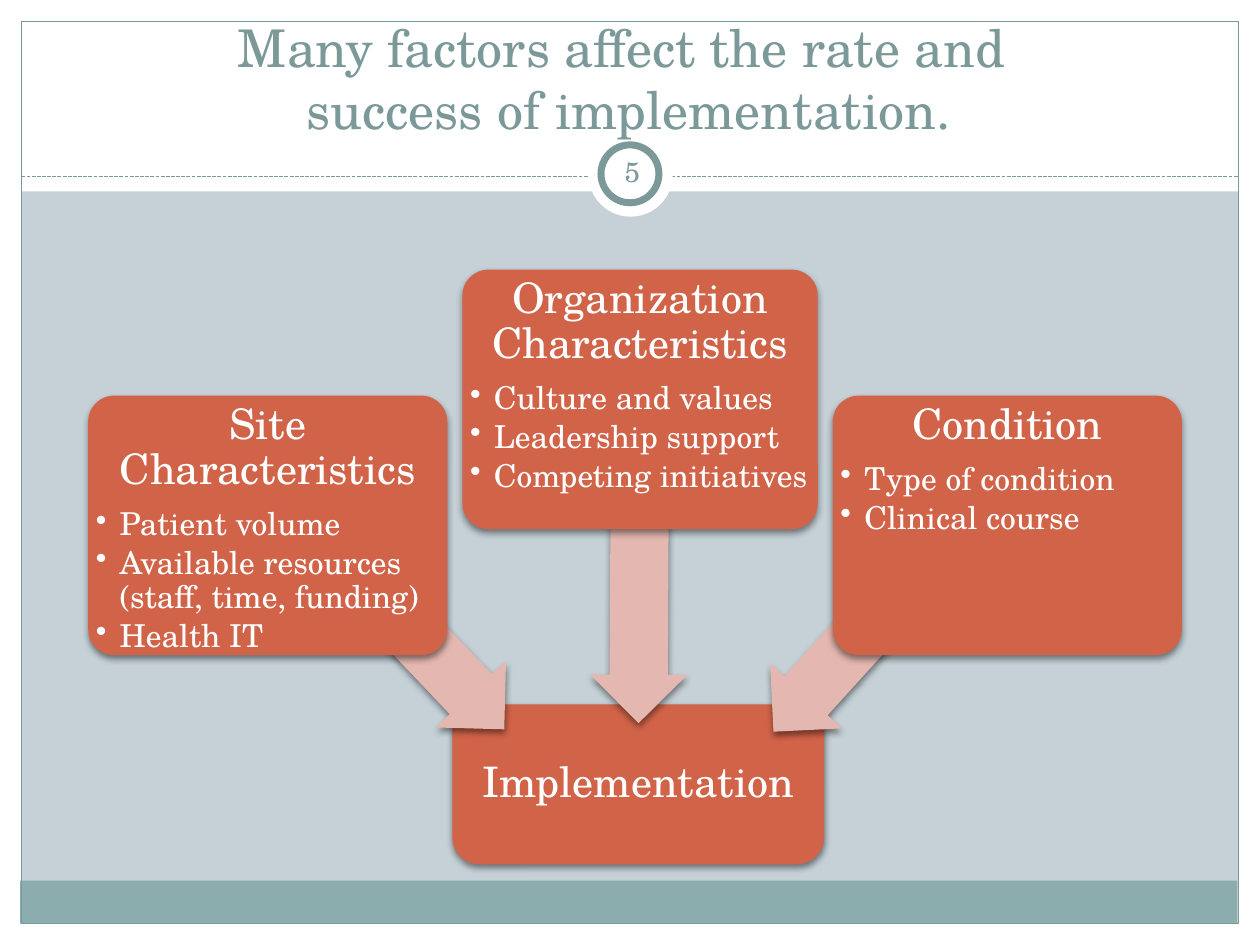
from dataclasses import dataclass

from lxml import etree
from pptx import Presentation
from pptx.dml.color import RGBColor
from pptx.enum.dml import MSO_LINE
from pptx.enum.shapes import MSO_CONNECTOR, MSO_SHAPE as Shape
from pptx.enum.text import MSO_ANCHOR as Anchor, PP_ALIGN as Align
from pptx.oxml import parse_xml
from pptx.oxml.ns import nsdecls, qn
from pptx.util import Inches, Pt


@dataclass(frozen=True)
class Theme:
    font: str = "TeX Gyre Schola"
    background: str = "C5D1D7"
    white: str = "FFFFFF"
    accent: str = "7C999A"
    footer: str = "8CADAE"
    box: str = "D16349"
    arrow: str = "E5B7B1"
    title_size: float = 29.7
    heading_size: float = 24
    bullet_size: float = 18
    number_size: float = 16


THEME = Theme()

FACTORS = [  # left, top, width, heading, bullets
    (0.7, 3.14, 2.85, "Site Characteristics",
     ["Patient volume", "Available resources (staff, time, funding)", "Health IT"]),
    (3.67, 2.14, 2.82, "Organization Characteristics",
     ["Culture and values", "Leadership support", "Competing initiatives"]),
    (6.61, 3.14, 2.77, "Condition",
     ["Type of condition", "Clinical course"]),
]
FACTOR_HEIGHT = 2.06
ARROWS = [  # left, top, length, rotation; one for each factor
    (1.9, 4.5, 2.49, 226.5),
    (3.65, 3.93, 2.85, 270.3),
    (5.73, 4.5, 2.49, 312.2),
]
ARROW_HEIGHT = 0.77


def color(code):
    return RGBColor.from_string(code)


def add_shadow(shape):
    shape._element.spPr.append(parse_xml(
        f'<a:effectLst {nsdecls("a")}>'
        '<a:outerShdw blurRad="50800" dist="25400" dir="5400000" rotWithShape="0">'
        '<a:srgbClr val="000000"><a:alpha val="45000"/></a:srgbClr>'
        '</a:outerShdw></a:effectLst>'))


def add_figure(slide, kind, left, top, width, height, fill=None, line=None,
               weight=0.75, rotation=0, adjust=(), shadow=False):
    figure = slide.shapes.add_shape(
        kind, Inches(left), Inches(top), Inches(width), Inches(height))
    if fill:
        figure.fill.solid()
        figure.fill.fore_color.rgb = color(fill)
    else:
        figure.fill.background()
    if line:
        figure.line.color.rgb = color(line)
        figure.line.width = Pt(weight)
    else:
        figure.line.fill.background()
    figure.rotation = rotation
    for index, value in enumerate(adjust):
        figure.adjustments[index] = value
    if shadow:
        add_shadow(figure)
    else:
        figure.shadow.inherit = False
    return figure


def set_frame(frame, anchor=Anchor.TOP, inset=0.0):
    frame.word_wrap = True
    frame.vertical_anchor = anchor
    frame.margin_left = frame.margin_right = Inches(inset)
    frame.margin_top = frame.margin_bottom = Inches(inset)


def write(paragraph, text, size, ink=THEME.white, align=Align.CENTER,
          spacing=None, after=0.0, bullet=False):
    paragraph.alignment = align
    paragraph.space_after = Pt(after)
    if spacing:
        paragraph.line_spacing = spacing
    if bullet:
        properties = paragraph._p.get_or_add_pPr()
        properties.set("marL", str(Inches(0.19)))
        properties.set("indent", str(-Inches(0.19)))
        etree.SubElement(properties, qn("a:buChar")).set("char", "•")
    for number, row in enumerate(text.split("\n")):
        if number:
            paragraph.add_line_break()
        run = paragraph.add_run()
        run.text = row
        run.font.name = THEME.font
        run.font.size = Pt(size)
        run.font.color.rgb = color(ink)


def add_label(slide, left, top, width, height, text, size, anchor, inset):
    label = slide.shapes.add_textbox(
        Inches(left), Inches(top), Inches(width), Inches(height))
    set_frame(label.text_frame, anchor, inset)
    write(label.text_frame.paragraphs[0], text, size, ink=THEME.accent)


def add_divider(slide, left, right, y):
    divider = slide.shapes.add_connector(
        MSO_CONNECTOR.STRAIGHT, Inches(left), Inches(y), Inches(right), Inches(y))
    divider.line.color.rgb = color(THEME.accent)
    divider.line.width = Pt(0.75)
    divider.line.dash_style = MSO_LINE.SQUARE_DOT
    etree.SubElement(divider._element.spPr, qn("a:effectLst"))


def add_box(slide, left, top, width, height, heading, bullets=(),
            radius=0.1, anchor=Anchor.TOP):
    box = add_figure(slide, Shape.ROUNDED_RECTANGLE, left, top, width, height,
                     fill=THEME.box, adjust=[radius], shadow=True)
    frame = box.text_frame
    set_frame(frame, anchor)
    write(frame.paragraphs[0], heading, THEME.heading_size, spacing=0.9,
          after=0.35 * THEME.heading_size if bullets else 0)
    for item in bullets:
        write(frame.add_paragraph(), item, THEME.bullet_size, align=Align.LEFT,
              spacing=0.9, after=0.15 * THEME.bullet_size, bullet=True)


def add_page_frame(slide):
    slide.background.fill.solid()
    slide.background.fill.fore_color.rgb = color(THEME.background)
    # White margins, with a deep one behind the title
    for margin in [(0, 7.33, 10, 0.17), (0, 0, 10, 1.52),
                   (0, 0, 0.17, 7.5), (9.83, 0, 0.17, 7.5)]:
        add_figure(slide, Shape.RECTANGLE, *margin, fill=THEME.white)
    # Footer band, border and title divider
    add_figure(slide, Shape.RECTANGLE, 0.16, 6.99, 9.66, 0.34, fill=THEME.footer)
    add_figure(slide, Shape.RECTANGLE, 0.17, 0.17, 9.66, 7.16, line=THEME.accent)
    add_divider(slide, 0.17, 9.83, 1.4)
    # Ring for the slide number
    add_figure(slide, Shape.OVAL, 4.67, 1.05, 0.67, 0.67, fill=THEME.white)
    add_figure(slide, Shape.OVAL, 4.77, 1.15, 0.46, 0.46, fill=THEME.white,
               line=THEME.accent, weight=4)


def main():
    deck = Presentation()
    deck.slide_width, deck.slide_height = Inches(10), Inches(7.5)
    slide = deck.slides.add_slide(deck.slide_layouts[6])

    add_page_frame(slide)
    add_label(slide, 0.33, 0.33, 9.33, 0.83,
              "Many factors affect the rate and \nsuccess of implementation.",
              THEME.title_size, Anchor.BOTTOM, 0.05)

    # Outcome, then each factor on top of its arrow
    add_box(slide, 3.59, 5.59, 2.95, 1.27, "Implementation",
            radius=0.17, anchor=Anchor.MIDDLE)
    for arrow, factor in zip(ARROWS, FACTORS):
        left, top, length, rotation = arrow
        add_figure(slide, Shape.LEFT_ARROW, left, top, length, ARROW_HEIGHT,
                   fill=THEME.arrow, rotation=rotation, adjust=[0.6, 0.5], shadow=True)
        left, top, width, heading, bullets = factor
        add_box(slide, left, top, width, FACTOR_HEIGHT, heading, bullets)

    # Slide number
    add_label(slide, 4.77, 1.12, 0.5, 0.48, "5", THEME.number_size, Anchor.MIDDLE, 0.05)
    deck.save("out.pptx")


if __name__ == "__main__":
    main()
